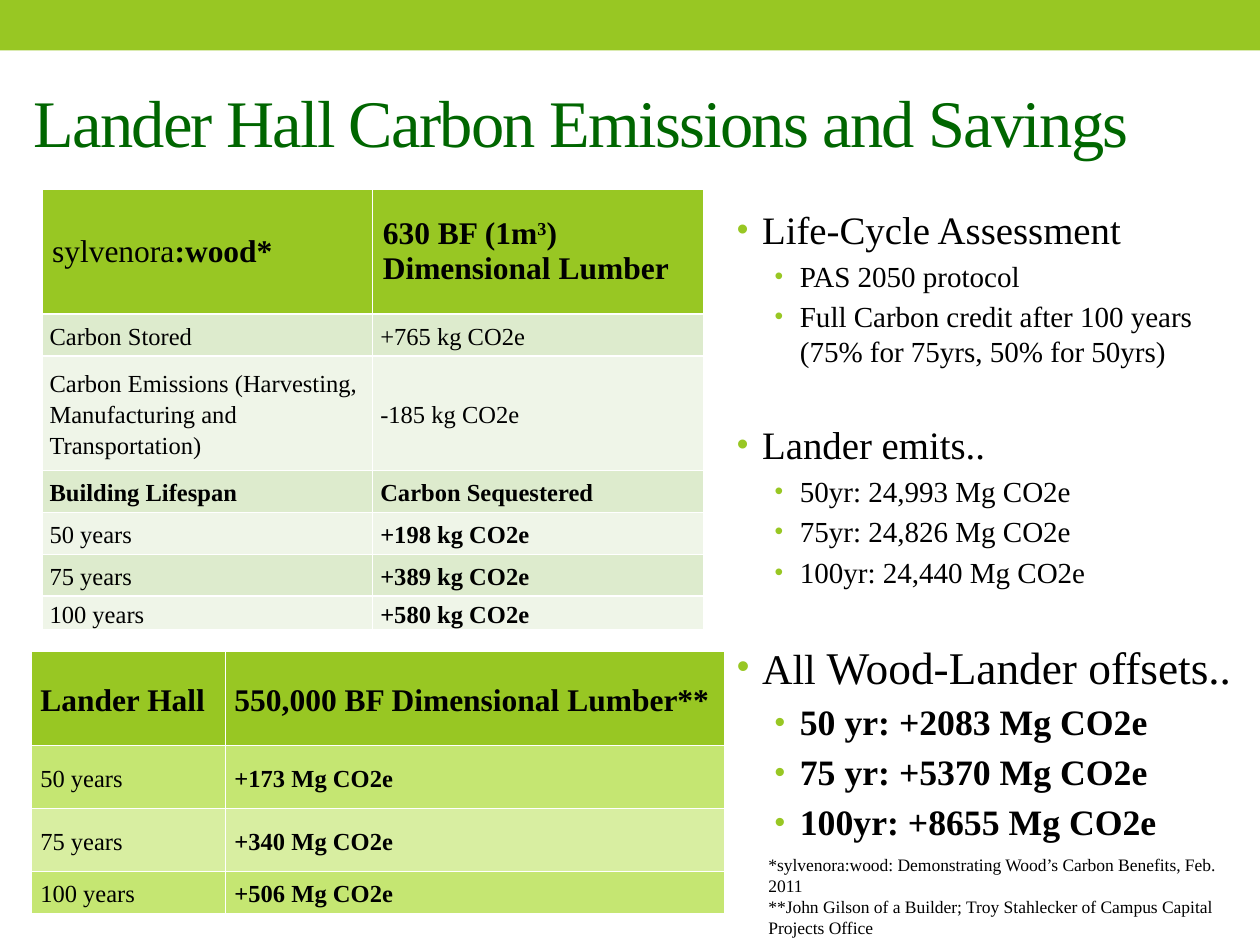
from dataclasses import dataclass

from lxml import etree
from pptx import Presentation, util as u
from pptx.dml.color import RGBColor
from pptx.enum import shapes, text
from pptx.oxml import ns


@dataclass(frozen=True)
class Theme:
    font: str = "Times New Roman"
    ink: str = "000000"
    title_ink: str = "006600"
    accent: str = "98C723"
    soft_bands: tuple = ("DDEBCD", "EFF5E8")
    bright_bands: tuple = ("C5E672", "D8EEA1")
    title: float = 38
    header: float = 18
    cell: float = 14
    topic: float = 22.2
    detail: float = 16.6
    offset_lead: float = 24.1
    offset_topic: float = 25.9
    offset: float = 20.4
    note: float = 10


THEME = Theme()
COLUMNS = 120  # the slide is 120 by 90 square grid units


def grid(units):
    return u.Inches(units * 10 / COLUMNS)


def box_at(place):
    return [grid(units) for units in place]


def set_all(target, values):
    for name, value in values.items():
        setattr(target, name, value)


def add_span(para, words, size, color=THEME.ink, **formats):
    span = para.add_run()
    span.text = words
    set_all(span.font, {"name": THEME.font, "size": u.Pt(size), **formats})
    span.font.color.rgb = RGBColor.from_string(color)
    return span


def next_para(frame, index):
    return frame.paragraphs[0] if index == 0 else frame.add_paragraph()


def add_text_box(page, place, anchor=text.MSO_ANCHOR.TOP):
    frame = page.shapes.add_textbox(*box_at(place)).text_frame
    set_all(frame, {"word_wrap": True, "vertical_anchor": anchor})
    return frame


def add_band(page, place):
    band = page.shapes.add_shape(shapes.MSO_SHAPE.RECTANGLE, *box_at(place))
    band.shadow.inherit = False
    band.fill.solid()
    band.fill.fore_color.rgb = RGBColor.from_string(THEME.accent)
    band.line.fill.background()


def add_title(page, place, words):
    frame = add_text_box(page, place, text.MSO_ANCHOR.MIDDLE)
    span = add_span(frame.paragraphs[0], words, THEME.title, THEME.title_ink)
    span.font._element.set("spc", "-100")


def fill_cell(cell, spans, color, size, margins, line_spacing):
    side, top = (u.Inches(margin) for margin in margins)
    set_all(cell, {"margin_left": side, "margin_right": side,
                   "margin_top": top, "margin_bottom": top,
                   "vertical_anchor": text.MSO_ANCHOR.MIDDLE})
    cell.fill.solid()
    cell.fill.fore_color.rgb = RGBColor.from_string(color)
    para = cell.text_frame.paragraphs[0]
    para.line_spacing = line_spacing
    for words, bold, raised in spans:
        span = add_span(para, words, size, bold=bold)
        if raised:
            span.font._element.set("baseline", "30000")


def add_table(page, corner, widths, heights, rows, bands, head_style, body_style):
    """Each cell is a list of (words, bold, raised) spans."""
    place = (*corner, sum(widths), sum(heights))
    table = page.shapes.add_table(len(rows), len(widths), *box_at(place)).table
    for column, width in zip(table.columns, widths):
        column.width = grid(width)
    for index, (row, height, cells) in enumerate(zip(table.rows, heights, rows)):
        row.height = grid(height)
        color = bands[(index - 1) % 2] if index else THEME.accent
        size = THEME.cell if index else THEME.header
        style = body_style if index else head_style
        for cell, spans in zip(row.cells, cells):
            fill_cell(cell, spans, color, size, *style)


def plain(words):
    return [(words, False, False)]


def strong(words):
    return [(words, True, False)]


def add_bullet(para, left, hang=0.2):
    props = para._p.get_or_add_pPr()
    props.set("marL", str(u.Inches(left)))
    props.set("indent", str(-u.Inches(hang)))
    color = etree.SubElement(props, ns.qn("a:buClr"))
    etree.SubElement(color, ns.qn("a:srgbClr"), val=THEME.accent)
    etree.SubElement(props, ns.qn("a:buSzPct"), val="85000")
    etree.SubElement(props, ns.qn("a:buFont"), typeface="Arial")
    etree.SubElement(props, ns.qn("a:buChar"), char="•")


def add_outline(page, place, groups):
    """Each group is (gap above, topic spans, details, detail size, bold)."""
    frame = add_text_box(page, place)
    lines = []
    for gap, topic, details, size, bold in groups:
        lines.append((0, gap, topic, False))
        lines += [(1, 0, [(words, size)], bold) for words in details]
    for index, (level, gap, spans, bold) in enumerate(lines):
        para = next_para(frame, index)
        para.level = level
        para.space_before = u.Pt(round(gap + 0.2 * spans[-1][1], 1))
        add_bullet(para, 0.5 if level else 0.2)
        for words, size in spans:
            add_span(para, words, size, bold=bold)


def add_notes(page, place, notes):
    frame = add_text_box(page, place)
    for index, words in enumerate(notes):
        add_span(next_para(frame, index), words, THEME.note)


def main():
    deck = Presentation()
    set_all(deck, {"slide_width": grid(COLUMNS), "slide_height": grid(90)})
    page = deck.slides.add_slide(deck.slide_layouts[6])

    # Top band and title
    add_band(page, (0, 0, COLUMNS, 4.8))
    add_title(page, (2, 5, 108, 13), "Lander Hall Carbon Emissions and Savings")

    # Carbon per cubic metre of lumber
    lumber = [
        [[("sylvenora", False, False), (":wood*", True, False)],
         [("630 BF (1m", True, False), ("3", True, True),
          (") Dimensional Lumber", True, False)]],
        [plain("Carbon Stored"), plain("+765 kg CO2e")],
        [plain("Carbon Emissions (Harvesting, Manufacturing and Transportation)"),
         plain("-185 kg CO2e")],
        [strong("Building Lifespan"), strong("Carbon Sequestered")],
        [plain("50 years"), strong("+198 kg CO2e")],
        [plain("75 years"), strong("+389 kg CO2e")],
        [plain("100 years"), strong("+580 kg CO2e")],
    ]
    add_table(page, (4, 18), [31.5] * 2, [11.9, 4, 10.9, 4, 4, 4, 3.1], lumber,
              THEME.soft_bands, ((0.08, 0.05), 1), ((0.06, 0), 1.15))

    # Topics on the right
    add_outline(page, (69, 19, 50, 62), [
        (0, [("Life-Cycle Assessment", THEME.topic)],
         ["PAS 2050 protocol",
          "Full Carbon credit after 100 years (75% for 75yrs, 50% for 50yrs)"],
         THEME.detail, False),
        (25.5, [("Lander emits..", THEME.topic)],
         ["50yr: 24,993 Mg CO2e", "75yr: 24,826 Mg CO2e", "100yr: 24,440 Mg CO2e"],
         THEME.detail, False),
        (23, [("All", THEME.offset_lead),
              (" Wood-Lander offsets..", THEME.offset_topic)],
         ["50 yr: +2083 Mg CO2e", "75 yr: +5370 Mg CO2e", "100yr: +8655 Mg CO2e"],
         THEME.offset, True),
    ])

    # Carbon for the whole hall
    hall = [
        [strong("Lander Hall"), strong("550,000 BF Dimensional Lumber**")],
        [plain("50 years"), strong("+173 Mg CO2e")],
        [plain("75 years"), strong("+340 Mg CO2e")],
        [plain("100 years"), strong("+506 Mg CO2e")],
    ]
    hall_style = ((0.07, 0), 1.15)
    add_table(page, (3, 62), [18.5, 47.5], [9, 6, 6, 4], hall,
              THEME.bright_bands, hall_style, hall_style)

    # Sources
    add_notes(page, (72, 80.75, 48, 9.25), [
        "*sylvenora:wood: Demonstrating Wood’s Carbon Benefits, Feb. 2011",
        "**John Gilson of a Builder; Troy Stahlecker of Campus "
        "Capital Projects Office",
    ])

    deck.save("out.pptx")


if __name__ == "__main__":
    main()
